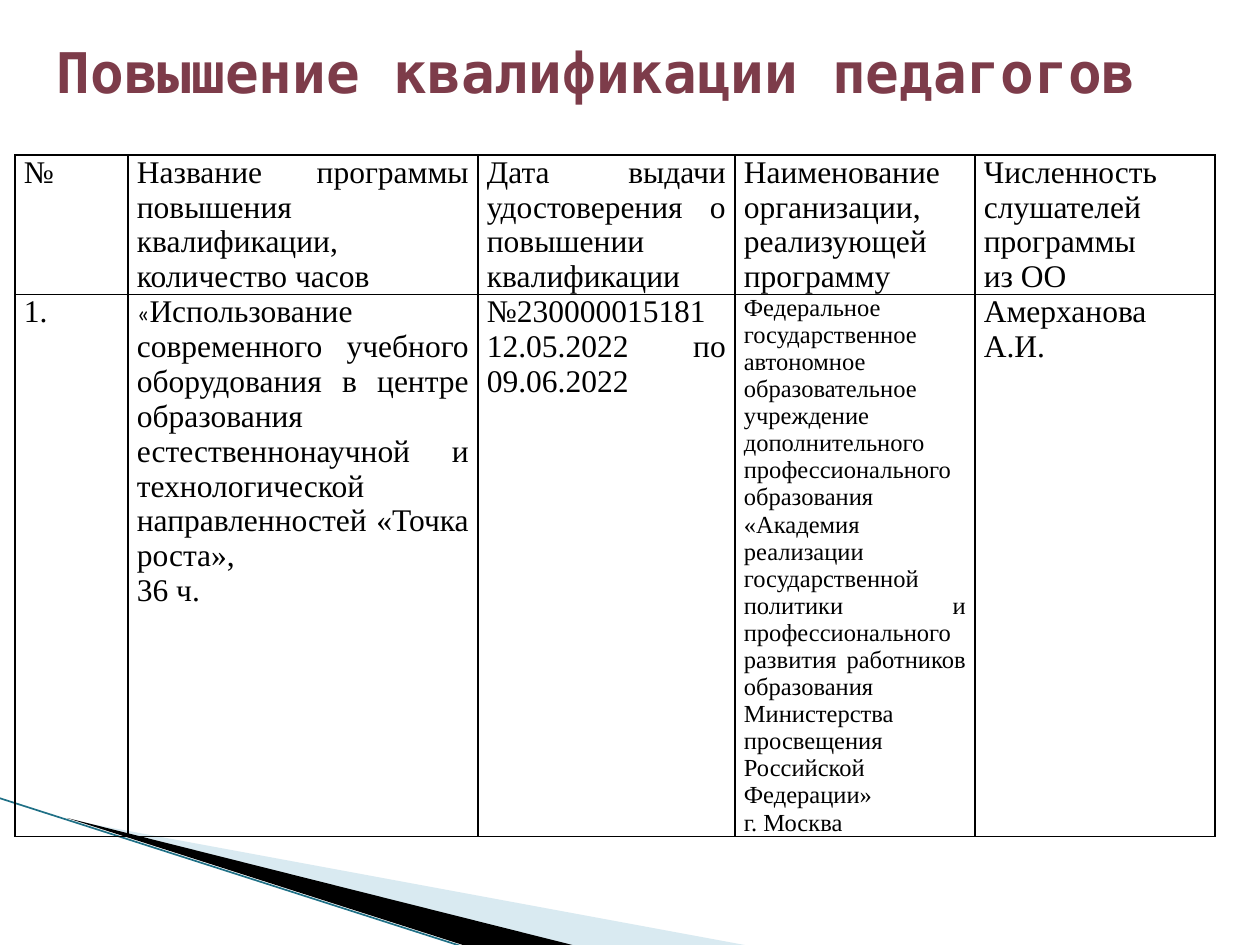
from dataclasses import dataclass

import pptx
import pptx.dml.color
import pptx.enum.shapes
import pptx.enum.text
import pptx.oxml
import pptx.oxml.ns
import pptx.util

EMU_PER_PX = 914400 / 126
RGB = pptx.dml.color.RGBColor.from_string
ALIGN = pptx.enum.text.PP_ALIGN
ANCHOR = pptx.enum.text.MSO_ANCHOR


@dataclass(frozen=True)
class Theme:
    title_color: str = "7D3C4A"
    ink: str = "000000"
    pale: str = "A0CBDC"
    teal: str = "1F7086"
    title_font: str = "DejaVu Sans Mono"
    body_font: str = "Times New Roman"
    quote_font: str = "Calibri"
    title_size: int = 32
    body_size: int = 18
    small_size: int = 14


@dataclass(frozen=True)
class Wedge:
    points: tuple[tuple[int, int], ...]
    color: str
    opacity: int = 100


@dataclass(frozen=True)
class Entry:
    """Cell text: one string per paragraph, with an optional opening quote."""
    lines: tuple[str, ...]
    size: int
    quote: str = ""


THEME = Theme()
WEDGES = (
    Wedge(((69, 820), (750, 946), (575, 946)), THEME.pale, 40),
    Wedge(((67, 818), (576, 946), (469, 947)), THEME.ink),
)
COLUMNS = (113, 350, 257, 240, 240)
ROWS = (139, 542)


def body(*lines: str, quote: str = "") -> Entry:
    return Entry(lines, THEME.body_size, quote)


ENTRIES = (
    (
        body("№"),
        body("Название программы повышения квалификации, количество часов"),
        body("Дата выдачи удостоверения о повышении квалификации"),
        body("Наименование организации, реализующей программу"),
        body("Численность слушателей программы", "из ОО"),
    ),
    (
        body("1."),
        body("Использование современного учебного оборудования в центре "
             "образования естественнонаучной и технологической "
             "направленностей «Точка роста»,", "36 ч.", quote="«"),
        body("№230000015181", "12.05.2022 по 09.06.2022"),
        Entry(("Федеральное государственное автономное образовательное "
               "учреждение дополнительного профессионального образования "
               "«Академия реализации государственной политики и "
               "профессионального развития работников образования "
               "Министерства просвещения Российской Федерации»",
               "г. Москва"), THEME.small_size),
        body("Амерханова А.И."),
    ),
)


def px(length: int) -> pptx.util.Emu:
    return pptx.util.Emu(round(length * EMU_PER_PX))


def add_text(para, text: str, *, size: int, font: str = THEME.body_font,
             color: str = THEME.ink, bold: bool = False) -> None:
    span = para.add_run()
    span.text = text
    span.font.size = pptx.util.Pt(size)
    span.font.name = font
    span.font.bold = bold
    span.font.color.rgb = RGB(color)


def add_wedge(page, wedge: Wedge) -> None:
    start, *others = wedge.points
    builder = page.shapes.build_freeform(*start, scale=EMU_PER_PX)
    builder.add_line_segments(others, close=True)
    shape = builder.convert_to_shape()
    shape.shadow.inherit = False
    shape.line.fill.background()
    shape.fill.solid()
    shape.fill.fore_color.rgb = RGB(wedge.color)
    if wedge.opacity < 100:
        color = shape.fill._xPr.find(".//" + pptx.oxml.ns.qn("a:srgbClr"))
        alpha = color.makeelement(pptx.oxml.ns.qn("a:alpha"),
                                  {"val": str(wedge.opacity * 1000)})
        color.append(alpha)


def add_edge_line(page) -> None:
    line = page.shapes.add_connector(
        pptx.enum.shapes.MSO_CONNECTOR.STRAIGHT,
        px(-1), px(798), px(467), px(948))
    line.line.color.rgb = RGB(THEME.teal)
    line.line.width = pptx.util.Pt(0.95)
    properties = line._element.spPr
    properties.append(properties.makeelement(pptx.oxml.ns.qn("a:effectLst"), {}))


def set_title(page) -> None:
    box = page.shapes.title
    box.left, box.top, box.width, box.height = map(px, (44, 16, 1134, 110))
    frame = box.text_frame
    frame.word_wrap = True
    frame.auto_size = pptx.enum.text.MSO_AUTO_SIZE.NONE
    frame.vertical_anchor = ANCHOR.MIDDLE
    para = frame.paragraphs[0]
    para.alignment = ALIGN.LEFT
    add_text(para, "Повышение квалификации педагогов", size=THEME.title_size,
             font=THEME.title_font, color=THEME.title_color, bold=True)


def set_borders(cell) -> None:
    properties = cell._tc.get_or_add_tcPr()
    for index, side in enumerate(("lnL", "lnR", "lnT", "lnB")):
        border = pptx.oxml.parse_xml(
            f'<a:{side} {pptx.oxml.ns.nsdecls("a")} w="12700"><a:solidFill>'
            f'<a:srgbClr val="{THEME.ink}"/></a:solidFill></a:{side}>')
        properties.insert(index, border)


def fill_cell(cell, entry: Entry) -> None:
    cell.margin_left = cell.margin_right = px(9)
    cell.margin_top = cell.margin_bottom = 0
    cell.vertical_anchor = ANCHOR.TOP
    cell.fill.background()
    set_borders(cell)
    frame = cell.text_frame
    for index, line in enumerate(entry.lines):
        para = frame.add_paragraph() if index else frame.paragraphs[0]
        para.alignment = ALIGN.JUSTIFY
        if entry.quote and index == 0:
            add_text(para, entry.quote, size=THEME.small_size,
                     font=THEME.quote_font)
        add_text(para, line, size=entry.size)


def add_courses(page) -> None:
    table = page.shapes.add_table(
        len(ROWS), len(COLUMNS), px(15), px(155),
        px(sum(COLUMNS)), px(sum(ROWS))).table
    table.first_row = table.horz_banding = False
    for column, width in zip(table.columns, COLUMNS):
        column.width = px(width)
    for row, height, entries in zip(table.rows, ROWS, ENTRIES):
        row.height = px(height)
        for cell, entry in zip(row.cells, entries):
            fill_cell(cell, entry)


def main() -> None:
    deck = pptx.Presentation()
    deck.slide_width, deck.slide_height = px(1260), px(945)
    page = deck.slides.add_slide(deck.slide_layouts.get_by_name("Title Only"))
    for wedge in WEDGES:
        add_wedge(page, wedge)
    add_edge_line(page)
    set_title(page)
    add_courses(page)
    deck.save("out.pptx")


if __name__ == "__main__":
    main()
